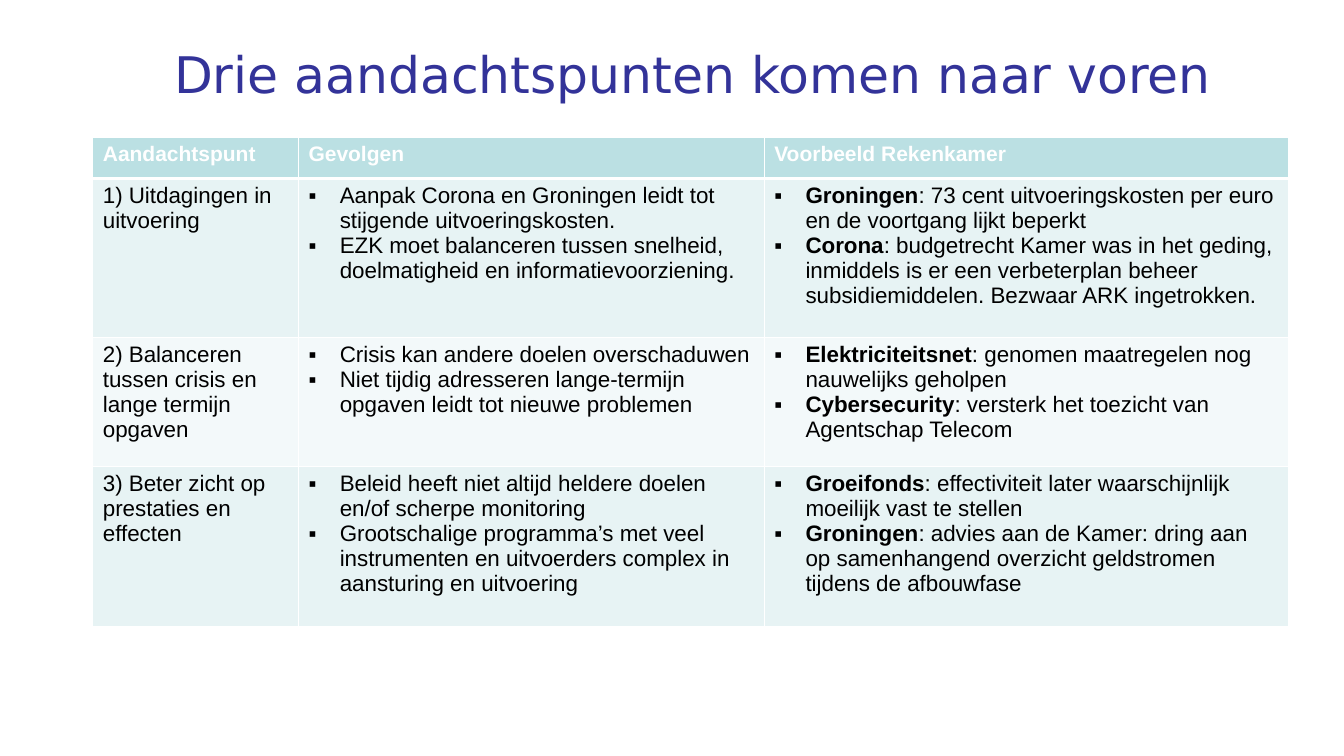
import pptx
import pptx.dml.color
import pptx.enum.text
import pptx.util
from lxml import etree
from pptx.oxml.ns import qn
from pptx.util import Inches

TITLE = "Drie aandachtspunten komen naar voren"
HEADERS = ["Aandachtspunt", "Gevolgen", "Voorbeeld Rekenkamer"]
# Each row: point, list of consequences, list of (topic, finding)
POINTS = [
    ("1) Uitdagingen in uitvoering",
     ["Aanpak Corona en Groningen leidt tot stijgende uitvoeringskosten.",
      "EZK moet balanceren tussen snelheid, doelmatigheid en informatievoorziening."],
     [("Groningen", ": 73 cent uitvoeringskosten per euro en de voortgang lijkt beperkt"),
      ("Corona", ": budgetrecht Kamer was in het geding, inmiddels is er een verbeterplan "
                 "beheer subsidiemiddelen. Bezwaar ARK ingetrokken.")]),
    ("2) Balanceren tussen crisis en lange termijn opgaven",
     ["Crisis kan andere doelen overschaduwen",
      "Niet tijdig adresseren lange-termijn opgaven leidt tot nieuwe problemen"],
     [("Elektriciteitsnet", ": genomen maatregelen nog nauwelijks geholpen"),
      ("Cybersecurity", ": versterk het toezicht van Agentschap Telecom")]),
    ("3) Beter zicht op prestaties en effecten",
     ["Beleid heeft niet altijd heldere doelen en/of scherpe monitoring",
      "Grootschalige programma’s met veel instrumenten en uitvoerders complex in "
      "aansturing en uitvoering"],
     [("Groeifonds", ": effectiviteit later waarschijnlijk moeilijk vast te stellen"),
      ("Groningen", ": advies aan de Kamer: dring aan op samenhangend overzicht "
                    "geldstromen tijdens de afbouwfase")]),
]
COLUMN_WIDTHS = [2.04, 4.62, 5.2]
ROW_HEIGHTS = [0.41, 1.58, 1.28, 1.59]
HEADER_FILL = "BBE0E3"
BAND_FILLS = ["E7F3F4", "F3F9FA"]
BULLET_INDENT = Inches(0.31)


def color(hex_value):
    return pptx.dml.color.RGBColor.from_string(hex_value)


def set_font(paragraph, name, size, hex_value, bold=None):
    paragraph.font.name = name
    paragraph.font.size = pptx.util.Pt(size)
    paragraph.font.color.rgb = color(hex_value)
    paragraph.font.bold = bold


def add_bullet(paragraph):
    properties = paragraph._p.get_or_add_pPr()
    properties.set("marL", str(BULLET_INDENT))
    properties.set("indent", str(-BULLET_INDENT))
    etree.SubElement(properties, qn("a:buFont"), typeface="Arial")
    etree.SubElement(properties, qn("a:buChar"), char="▪")


def style_cell(cell, fill, bottom_width=1):
    """Give the cell white borders and a solid fill."""
    properties = cell._tc.get_or_add_tcPr()
    for side, width in (("L", 1), ("R", 1), ("T", 1), ("B", bottom_width)):
        border = etree.SubElement(properties, qn(f"a:ln{side}"), w=str(pptx.util.Pt(width)))
        solid = etree.SubElement(border, qn("a:solidFill"))
        etree.SubElement(solid, qn("a:srgbClr"), val="FFFFFF")
    cell.fill.solid()
    cell.fill.fore_color.rgb = color(fill)


def fill_cell(cell, content):
    """Write a plain line, or a bullet per item with its topic in bold."""
    items = [content] if isinstance(content, str) else content
    frame = cell.text_frame
    for index, item in enumerate(items):
        paragraph = frame.add_paragraph() if index else frame.paragraphs[0]
        if items is content:
            add_bullet(paragraph)
        if isinstance(item, str):
            paragraph.add_run().text = item
        else:
            topic, finding = item
            topic_run = paragraph.add_run()
            topic_run.text = topic
            topic_run.font.bold = True
            paragraph.add_run().text = finding
        set_font(paragraph, "Arial", 16, "000000")


def main():
    presentation = pptx.Presentation()
    presentation.slide_width = Inches(13.33)
    presentation.slide_height = Inches(7.5)
    slide = presentation.slides.add_slide(presentation.slide_layouts[6])

    title = slide.shapes.add_textbox(Inches(1.63), 0, Inches(11.5), Inches(1.45)).text_frame
    title.word_wrap = True
    title.vertical_anchor = pptx.enum.text.MSO_ANCHOR.MIDDLE
    title.text = TITLE
    set_font(title.paragraphs[0], "DejaVu Sans", 36, "333399")

    table = slide.shapes.add_table(
        len(ROW_HEIGHTS), len(COLUMN_WIDTHS), Inches(0.92), Inches(1.36),
        Inches(sum(COLUMN_WIDTHS)), Inches(sum(ROW_HEIGHTS))).table
    for column, width in zip(table.columns, COLUMN_WIDTHS):
        column.width = Inches(width)
    for row, height in zip(table.rows, ROW_HEIGHTS):
        row.height = Inches(height)

    for column, header in enumerate(HEADERS):
        cell = table.cell(0, column)
        cell.text = header
        set_font(cell.text_frame.paragraphs[0], "Arial", 15, "FFFFFF", True)
        style_cell(cell, HEADER_FILL, bottom_width=3)
    for row, point in enumerate(POINTS, start=1):
        for column, content in enumerate(point):
            cell = table.cell(row, column)
            fill_cell(cell, content)
            style_cell(cell, BAND_FILLS[(row - 1) % 2], bottom_width=1)
            if row == 1:
                top = cell._tc.tcPr.find(qn("a:lnT"))
                top.set("w", str(pptx.util.Pt(3)))

    presentation.save("out.pptx")


if __name__ == "__main__":
    main()
